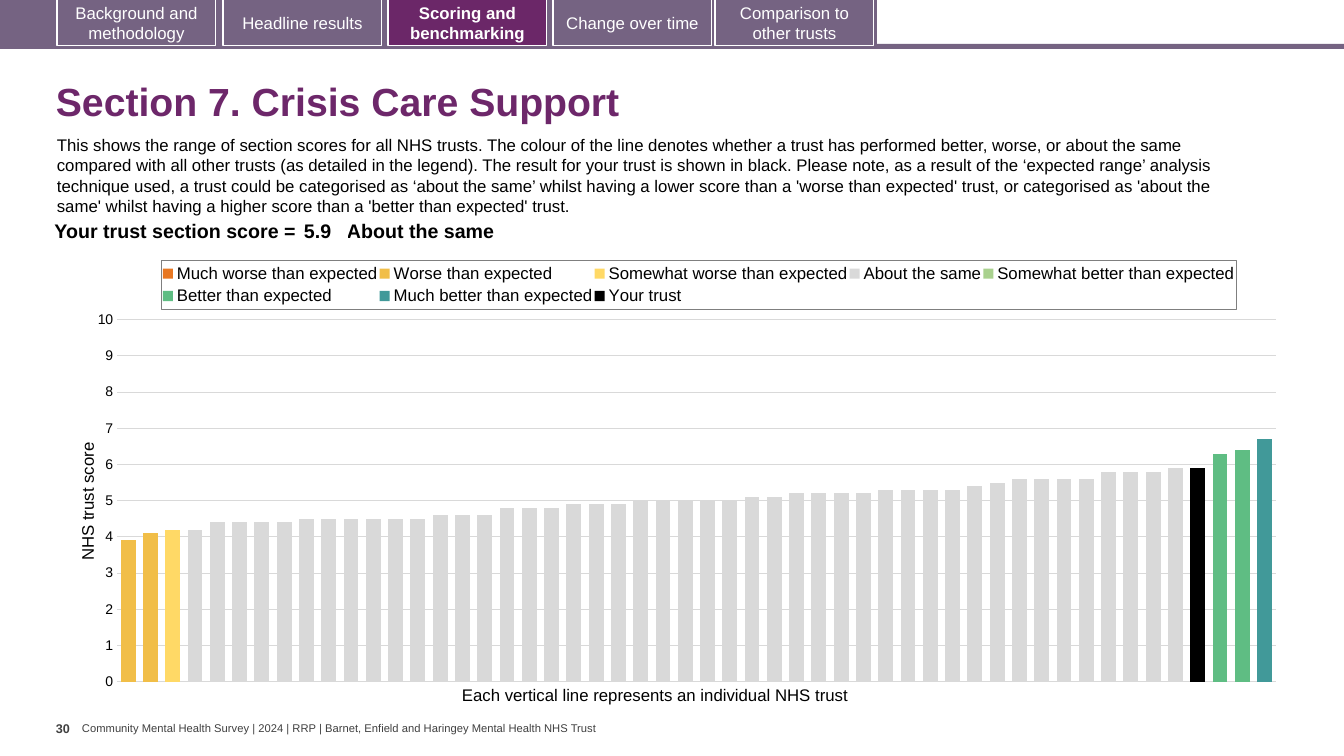
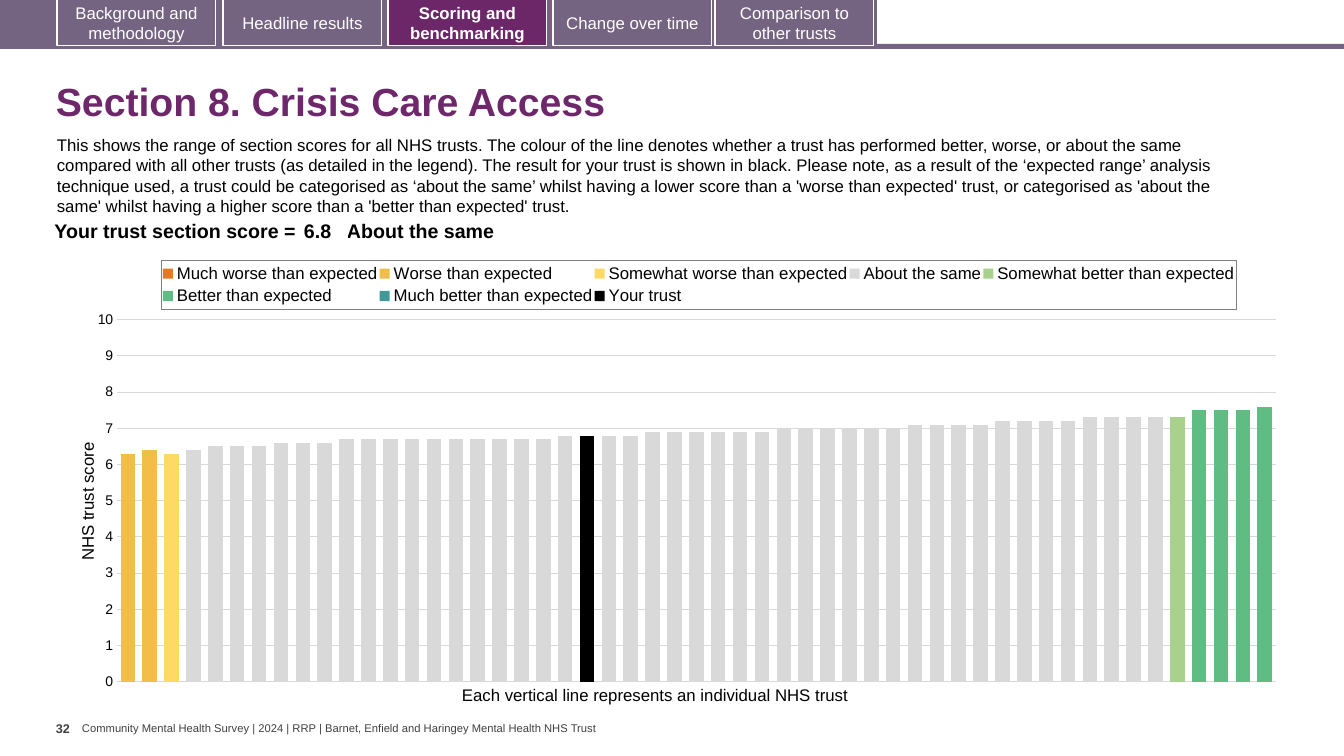
"""Build two benchmarking slides of section scores with a shared navigation band."""
from copy import deepcopy

from lxml import etree
from pptx import Presentation
from pptx.chart.axis import ValueAxis
from pptx.chart.data import CategoryChartData
from pptx.dml.color import RGBColor
from pptx.enum.chart import XL_CHART_TYPE, XL_LEGEND_POSITION, XL_TICK_LABEL_POSITION, XL_TICK_MARK
from pptx.enum.shapes import MSO_SHAPE
from pptx.enum.text import MSO_ANCHOR, PP_ALIGN
from pptx.oxml import parse_xml
from pptx.oxml.ns import nsdecls, qn
from pptx.util import Emu, Pt

PX = 914400 / 100.8
COLOURS = {
    "band": "756382", "active": "6B2768", "title": "6D276A", "white": "FFFFFF",
    "black": "000000", "footer": "404040", "grid": "D9D9D9", "frame": "7F7F7F",
}
RATINGS = {
    "Much worse than expected": "E87722",
    "Worse than expected": "F1BE48",
    "Somewhat worse than expected": "FFD966",
    "About the same": "D9D9D9",
    "Somewhat better than expected": "A9D18E",
    "Better than expected": "5FBD83",
    "Much better than expected": "419999",
}
OWN_TRUST = "Your trust"
TABS = [
    (57, "Background and methodology"),
    (223, "Headline results"),
    (388, "Scoring and benchmarking"),
    (553, "Change over time"),
    (715, "Comparison to other trusts"),
]
ACTIVE_TAB = "Scoring and benchmarking"
INTRO = (
    "This shows the range of section scores for all NHS trusts. The colour of the line denotes "
    "whether a trust has performed better, worse, or about the same compared with all other trusts "
    "(as detailed in the legend). The result for your trust is shown in black. Please note, as a "
    "result of the ‘expected range’ analysis technique used, a trust could be categorised as ‘about "
    "the same’ whilst having a lower score than a 'worse than expected' trust, or categorised as "
    "'about the same' whilst having a higher score than a 'better than expected' trust."
)
FOOTER = "Community Mental Health Survey | 2024 | RRP | Barnet, Enfield and Haringey Mental Health NHS Trust"
SECTIONS = [
    {
        "title": "Section 7. Crisis Care Support", "number": "30", "own": 48,
        "counts": [0, 2, 1, 46, 0, 2, 1],
        "scores": [
            3.9, 4.1, 4.2, 4.2, 4.4, 4.4, 4.4, 4.4, 4.5, 4.5, 4.5, 4.5, 4.5, 4.5, 4.6, 4.6, 4.6, 4.8,
            4.8, 4.8, 4.9, 4.9, 4.9, 5, 5, 5, 5, 5, 5.1, 5.1, 5.2, 5.2, 5.2, 5.2, 5.3, 5.3, 5.3, 5.3,
            5.4, 5.5, 5.6, 5.6, 5.6, 5.6, 5.8, 5.8, 5.8, 5.9, 5.9, 6.3, 6.4, 6.7,
        ],
    },
    {
        "title": "Section 8. Crisis Care Access", "number": "32", "own": 21,
        "counts": [0, 2, 1, 45, 1, 4, 0],
        "scores": [
            6.3, 6.4, 6.3, 6.4, 6.5, 6.5, 6.5, 6.6, 6.6, 6.6, 6.7, 6.7, 6.7, 6.7, 6.7, 6.7, 6.7, 6.7,
            6.7, 6.7, 6.8, 6.8, 6.8, 6.8, 6.9, 6.9, 6.9, 6.9, 6.9, 6.9, 7, 7, 7, 7, 7, 7, 7.1, 7.1,
            7.1, 7.1, 7.2, 7.2, 7.2, 7.2, 7.3, 7.3, 7.3, 7.3, 7.3, 7.5, 7.5, 7.5, 7.6,
        ],
    },
]


def write(frame, text, size, colour, bold=False, align=PP_ALIGN.LEFT):
    """Put one styled paragraph in a text frame."""
    para = frame.paragraphs[0]
    para.text = text
    para.alignment = align
    para.font.name = "Arial"
    para.font.size = Pt(size)
    para.font.bold = bold
    para.font.color.rgb = RGBColor.from_string(COLOURS[colour])
    return para


def place(element, index, target=None, **lengths):
    """Give a chart part a manual layout in fractions of the chart."""
    for old in element.findall(qn("c:layout")):
        element.remove(old)
    layout = etree.Element(qn("c:layout"))
    manual = etree.SubElement(layout, qn("c:manualLayout"))
    if target:
        etree.SubElement(manual, qn("c:layoutTarget"), val=target)
    for mode in ("xMode", "yMode"):
        etree.SubElement(manual, qn(f"c:{mode}"), val="edge")
    for name, length in lengths.items():
        etree.SubElement(manual, qn(f"c:{name}"), val=str(length))
    element.insert(index, layout)


deck = Presentation()
deck.slide_width, deck.slide_height = Emu(round(1344 * PX)), Emu(round(756 * PX))

for section in SECTIONS:
    page = deck.slides.add_slide(deck.slide_layouts[6])
    scores, own = section["scores"], section["own"]

    bars = [((0, 44, 1344, 5), "band", None), ((0, 0, 877, 47), "band", None)]
    bars += [((left, -1, 159, 47), "active" if label == ACTIVE_TAB else "band", label) for left, label in TABS]
    for area, colour, label in bars:
        bar = page.shapes.add_shape(MSO_SHAPE.RECTANGLE, *[Emu(round(n * PX)) for n in area])
        bar.shadow.inherit = False
        bar.fill.solid()
        bar.fill.fore_color.rgb = RGBColor.from_string(COLOURS[colour])
        if label is None:
            bar.line.fill.background()
            continue
        bar.line.color.rgb = RGBColor.from_string(COLOURS["white"])
        bar.line.width = Pt(0.75)
        bar.text_frame.word_wrap = True
        bar.text_frame.vertical_anchor = MSO_ANCHOR.MIDDLE
        write(bar.text_frame, label, 12, "white", label == ACTIVE_TAB, PP_ALIGN.CENTER)

    texts = [
        ((46, 67, 1259, 73), section["title"], 28, "title", True, True, None),
        ((47, 130, 1210, 92), INTRO, 12, "black", False, True, None),
        ((452, 680, 414, 30), "Each vertical line represents an individual NHS trust", 12, "black", False, False, None),
        ((56, 716, 25, 40), section["number"], 9, "footer", True, False, 5),
        ((82, 722, 521, 13), FOOTER, 8, "footer", False, False, 0),
    ]
    for area, text, size, colour, bold, wrap, inset in texts:
        box = page.shapes.add_textbox(*[Emu(round(n * PX)) for n in area])
        frame = box.text_frame
        frame.word_wrap = wrap
        if inset is not None:
            frame.margin_left = frame.margin_right = 0
            frame.margin_top = frame.margin_bottom = Emu(round(inset * PX))
        para = write(frame, text, size, colour, bold)
        if colour == "title":
            para.line_spacing = 0.9
        if colour == "title" or inset == 0:
            frame.vertical_anchor = MSO_ANCHOR.MIDDLE

    chart_data = CategoryChartData()
    chart_data.categories = [str(n + 1) for n in range(len(scores))]
    start = 0
    for rating, count in zip(RATINGS, section["counts"]):
        end = start + count
        chart_data.add_series(rating, [score if start <= n < end else None for n, score in enumerate(scores)])
        start = end
    chart_data.add_series(OWN_TRUST, [score if n == own else None for n, score in enumerate(scores)])
    chart = page.shapes.add_chart(
        XL_CHART_TYPE.COLUMN_CLUSTERED, *[Emu(round(n * PX)) for n in (68, 249, 1225, 448)], chart_data
    ).chart
    chart.has_title = False
    chart.font.name, chart.font.size = "Calibri", Pt(10)
    chart.font.color.rgb = RGBColor.from_string(COLOURS["black"])

    plot = chart.plots[0]
    plot.gap_width, plot.overlap, plot.vary_by_categories = 50, 100, False
    for series, colour in zip(plot.series, [*RATINGS.values(), COLOURS["black"]]):
        series.format.fill.solid()
        series.format.fill.fore_color.rgb = RGBColor.from_string(colour)
        series.invert_if_negative = False

    chart.category_axis.visible = False
    score_axis = chart.value_axis
    score_axis.minimum_scale, score_axis.maximum_scale, score_axis.major_unit = 0, 10, 1
    score_axis.major_tick_mark = XL_TICK_MARK.NONE
    score_axis.format.line.fill.background()
    score_axis.major_gridlines.format.line.color.rgb = RGBColor.from_string(COLOURS["grid"])
    score_axis.major_gridlines.format.line.width = Pt(0.75)
    score_axis.tick_labels.number_format = "0"
    score_axis.tick_labels.number_format_is_linked = False
    score_axis.tick_labels.font.name, score_axis.tick_labels.font.size = "Arial", Pt(10)
    title_frame = score_axis.axis_title.text_frame
    write(title_frame, "NHS trust score", 12, "black")
    title_frame._txBody.bodyPr.set("rot", "-5400000")
    title_frame._txBody.bodyPr.set("vert", "horz")

    chart.has_legend = True
    legend = chart.legend
    legend.position = XL_LEGEND_POSITION.TOP
    legend.include_in_layout = False
    legend.font.name, legend.font.size = "Arial", Pt(12)
    legend.font.color.rgb = RGBColor.from_string(COLOURS["black"])
    legend._element.find(qn("c:overlay")).addnext(parse_xml(
        f'<c:spPr {nsdecls("c", "a")}><a:ln w="9525"><a:solidFill>'
        f'<a:srgbClr val="{COLOURS["frame"]}"/></a:solidFill></a:ln></c:spPr>'
    ))

    columns = plot._element
    plot_area = columns.getparent()
    place(plot_area, 0, "inner", x=0.04, y=0.158, w=0.946, h=0.808)
    place(legend._element, 1, x=0.076, y=0.025, w=0.878, h=0.11)
    place(score_axis.axis_title._element, 1, x=0.005, y=0.425)

    own_columns = deepcopy(columns)
    for series in own_columns.findall(qn("c:ser"))[:-1]:
        own_columns.remove(series)
    columns.remove(columns.findall(qn("c:ser"))[-1])
    columns.addnext(own_columns)
    own_category, own_value = deepcopy(chart.category_axis._element), deepcopy(score_axis._element)
    for axis_id, number in zip(own_columns.findall(qn("c:axId")), ("5001", "5002")):
        axis_id.set("val", number)
    for axis, number, crossing in ((own_category, "5001", "5002"), (own_value, "5002", "5001")):
        axis.find(qn("c:axId")).set("val", number)
        axis.find(qn("c:crossAx")).set("val", crossing)
    own_value.find(qn("c:axPos")).set("val", "r")
    own_value.find(qn("c:crosses")).set("val", "max")
    score_axis._element.addnext(own_value)
    own_value.addnext(own_category)
    right_axis = ValueAxis(own_value)
    right_axis.has_title = right_axis.has_major_gridlines = False
    right_axis.major_tick_mark = XL_TICK_MARK.OUTSIDE
    right_axis.tick_label_position = XL_TICK_LABEL_POSITION.NONE

    table = page.shapes.add_table(1, 3, *[Emu(round(n * PX)) for n in (35, 217, 1178, 31)]).table
    table.first_row = table.horz_banding = False
    summary = [
        (265, 4, "Your trust section score =", PP_ALIGN.RIGHT),
        (47, 4, str(scores[own]), PP_ALIGN.LEFT),
        (866, 0, "About the same", PP_ALIGN.LEFT),
    ]
    for column, (width, inset, text, align) in enumerate(summary):
        table.columns[column].width = Emu(round(width * PX))
        cell = table.cell(0, column)
        cell.fill.background()
        cell.margin_left = cell.margin_right = Emu(round(inset * PX))
        cell.margin_top = cell.margin_bottom = Emu(round(4 * PX))
        write(cell.text_frame, text, 14, "black", True, align)

deck.save("out.pptx")
